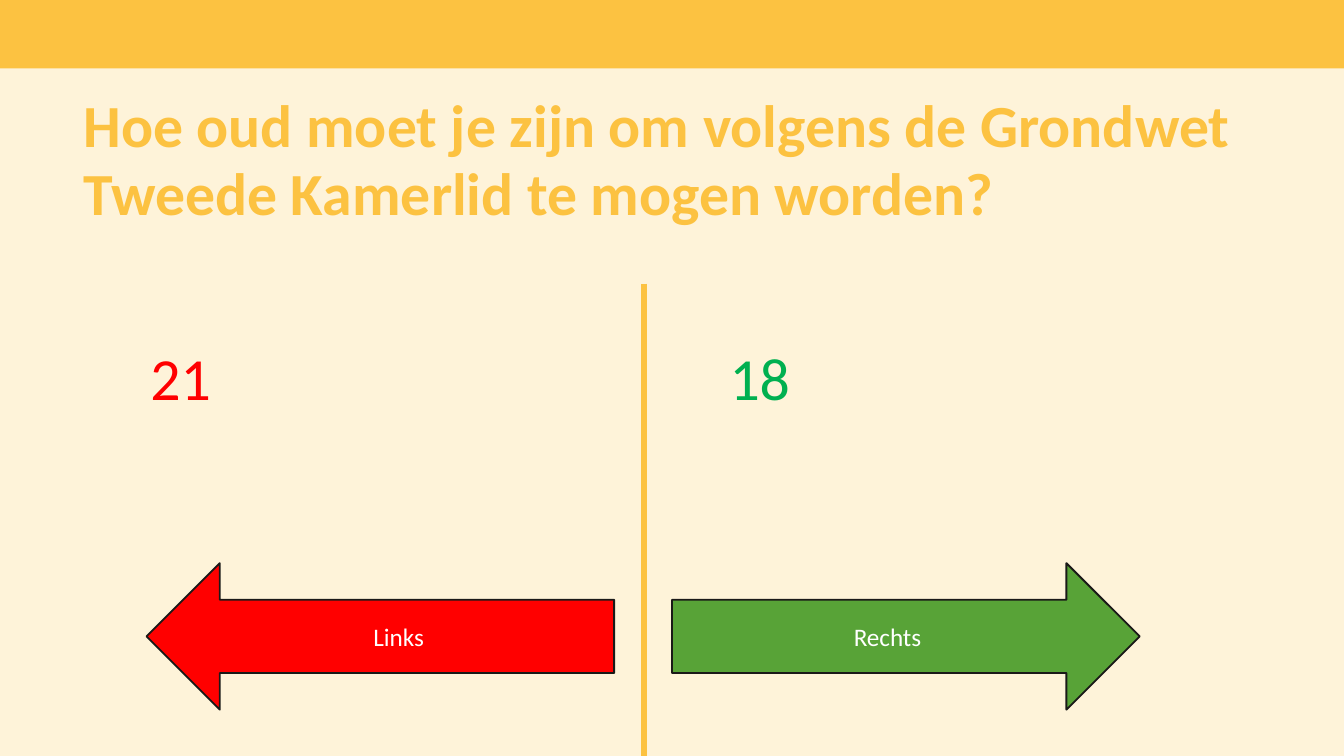
from dataclasses import dataclass

from lxml.etree import SubElement
from pptx import Presentation
from pptx.dml.color import RGBColor
from pptx.enum.shapes import MSO_CONNECTOR, MSO_SHAPE
from pptx.enum.text import MSO_ANCHOR, PP_ALIGN
from pptx.oxml.ns import qn
from pptx.slide import Slide
from pptx.util import Inches, Pt

WIDTH = 10
HEIGHT = WIDTH * 9 / 16
COLOURS = {
    "cream": "FEF3D9",
    "yellow": "FCC241",
    "red": "FF0000",
    "answer_green": "00B050",
    "arrow_green": "58A337",
    "outline": "1A1918",
    "white": "FFFFFF",
}


def colour(name):
    return RGBColor.from_string(COLOURS[name])


def write(frame, text, size=32, fill="white", bold=False, align=PP_ALIGN.LEFT,
          anchor=MSO_ANCHOR.TOP, spacing=None, font="Calibri"):
    frame.word_wrap = True
    frame.vertical_anchor = anchor
    paragraph = frame.paragraphs[0]
    paragraph.alignment = align
    if spacing:
        paragraph.line_spacing = Pt(spacing)
    run = paragraph.add_run()
    run.text = text
    run.font.name = font
    run.font.size = Pt(size)
    run.font.bold = bold
    run.font.color.rgb = colour(fill)


@dataclass
class QuizSlide:
    """Holds the style and the current slide of a two-way quiz question."""
    slide: Slide
    accent: str = "yellow"
    backdrop: str = "cream"

    def background(self):
        fill = self.slide.background.fill
        fill.solid()
        fill.fore_color.rgb = colour(self.backdrop)

    def shape(self, kind, left, top, width, height, fill, outline=None):
        shape = self.slide.shapes.add_shape(
            kind, Inches(left), Inches(top), Inches(width), Inches(height))
        shape.shadow.inherit = False
        shape.fill.solid()
        shape.fill.fore_color.rgb = colour(fill)
        if outline:
            shape.line.color.rgb = colour(outline)
            shape.line.width = Pt(1)
        else:
            shape.line.fill.background()
        return shape

    def banner(self, height):
        self.shape(MSO_SHAPE.RECTANGLE, 0, 0, WIDTH, height, self.accent)

    def text(self, left, top, width, height, text, **style):
        box = self.slide.shapes.add_textbox(
            Inches(left), Inches(top), Inches(width), Inches(height))
        write(box.text_frame, text, **style)
        return box.text_frame

    def question(self, text):
        frame = self.text(0.62, 0.64, 9.38, 0.98, text, fill=self.accent,
                          bold=True, spacing=36)
        frame.margin_left = frame.margin_right = frame.margin_bottom = 0

    def divider(self, x, top):
        divider = self.slide.shapes.add_connector(
            MSO_CONNECTOR.STRAIGHT, Inches(x), Inches(top), Inches(x), Inches(HEIGHT))
        divider.line.color.rgb = colour(self.accent)
        divider.line.width = Pt(3)
        SubElement(divider.element.spPr, qn("a:effectLst"))

    def arrow(self, left, label, fill, mirrored=False):
        arrow = self.shape(MSO_SHAPE.RIGHT_ARROW, left, 4.19, 3.48, 1.09, fill, "outline")
        if mirrored:
            arrow.element.spPr.find(qn("a:xfrm")).set("flipH", "1")
        write(arrow.text_frame, label, size=13.5, align=PP_ALIGN.CENTER,
              anchor=MSO_ANCHOR.MIDDLE)


def main():
    deck = Presentation()
    deck.slide_width, deck.slide_height = Inches(WIDTH), Inches(HEIGHT)
    quiz = QuizSlide(deck.slides.add_slide(deck.slide_layouts[6]))
    quiz.background()
    quiz.banner(0.51)
    quiz.question("Hoe oud moet je zijn om volgens de Grondwet "
                  "Tweede Kamerlid te mogen worden?")
    quiz.divider(4.79, 2.11)
    quiz.text(1.02, 2.49, 2.95, 0.64, "21", fill="red")
    quiz.text(5.33, 2.49, 3.84, 0.64, "18", fill="answer_green")
    quiz.arrow(5, "Rechts", "arrow_green")
    quiz.arrow(1.09, "Links", "red", mirrored=True)
    deck.save("out.pptx")


if __name__ == "__main__":
    main()
